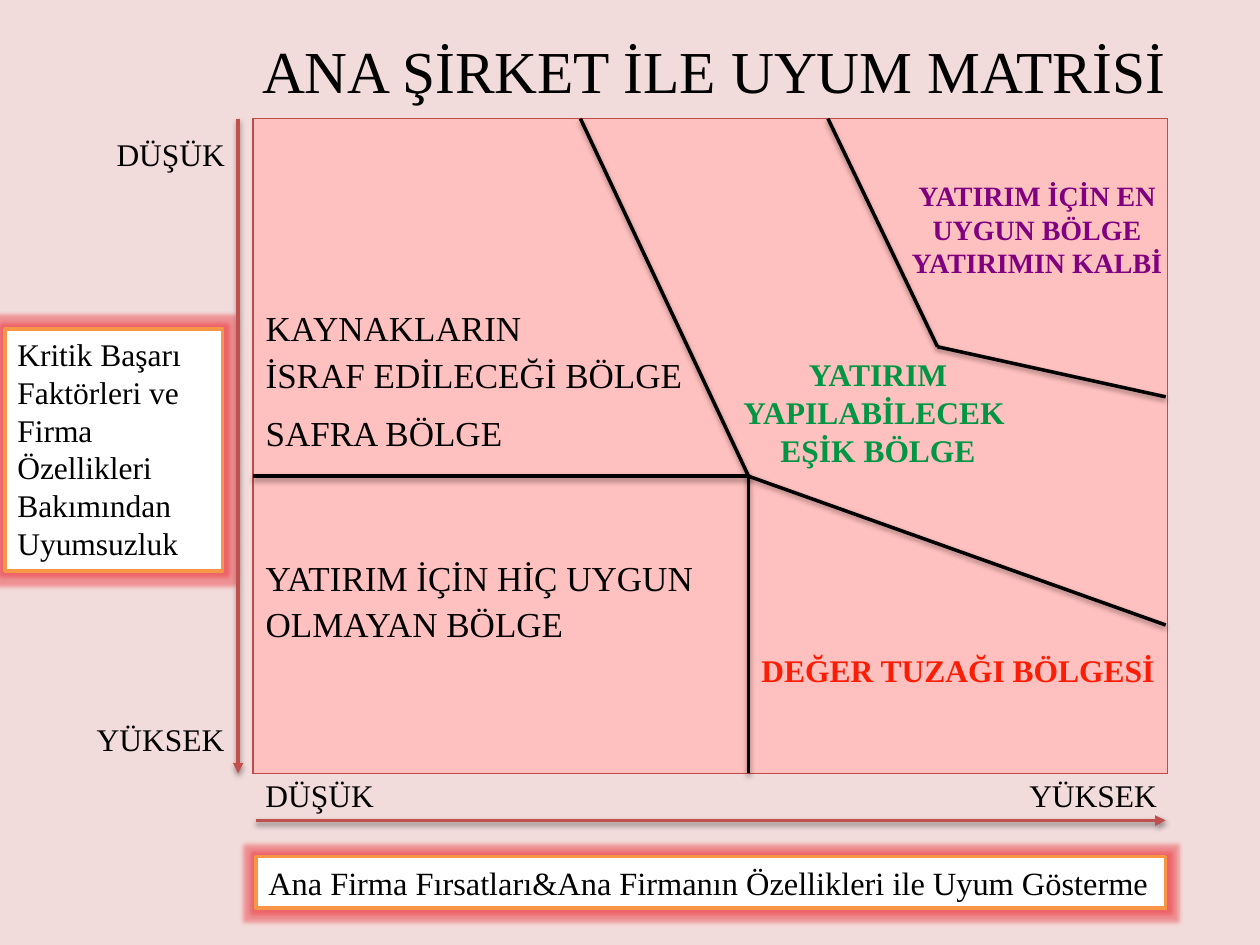
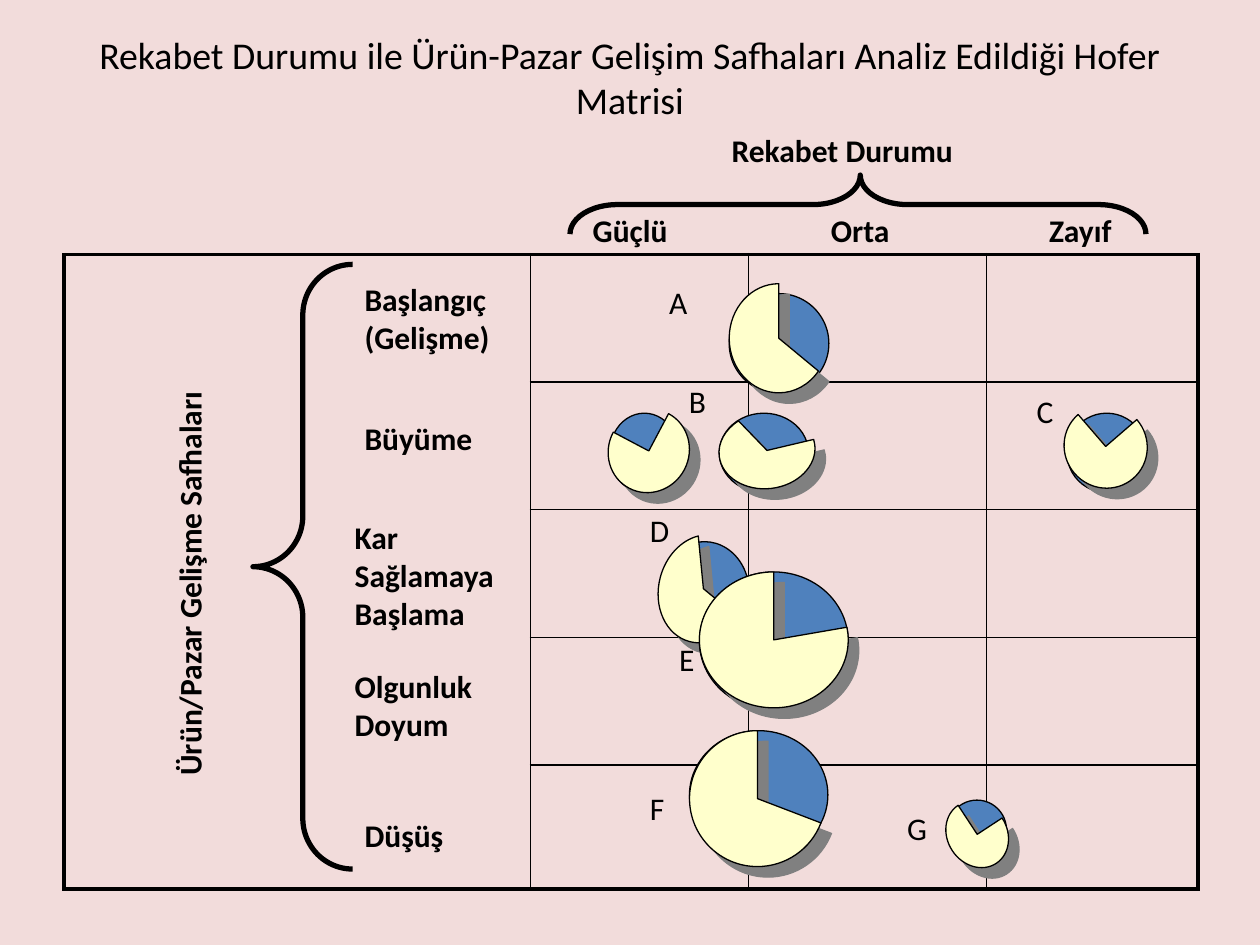
import math
from lxml import etree
from pptx import Presentation
from pptx import util as u
from pptx.dml import color
from pptx.enum import shapes, text
from pptx.oxml import ns

Cm, Pt = u.Cm, u.Pt
RGB = color.RGBColor
BACKGROUND = RGB(0xF2, 0xDC, 0xDB)
MATRIX_PINK = RGB(0xFF, 0xC1, 0xBF)
MATRIX_EDGE = RGB(0xBF, 0x4C, 0x48)
AXIS_RED = RGB(0xC0, 0x50, 0x4D)
ORANGE = RGB(0xF7, 0x96, 0x46)
GLOW_RED = RGB(0xEA, 0x22, 0x2A)
TRAP_RED = RGB(0xFC, 0x1D, 0x06)
GREEN = RGB(0x00, 0x96, 0x44)
PURPLE = RGB(0x80, 0x00, 0x80)
BLUE = RGB(0x4F, 0x81, 0xBD)
CREAM = RGB(0xFF, 0xFF, 0xCC)
GRAY = RGB(0x80, 0x80, 0x80)
BLACK = RGB(0, 0, 0)
WHITE = RGB(0xFF, 0xFF, 0xFF)
SERIF, SANS = "Times New Roman", "Calibri"
LEFT, CENTER = text.PP_ALIGN.LEFT, text.PP_ALIGN.CENTER
TOP, MIDDLE = text.MSO_ANCHOR.TOP, text.MSO_ANCHOR.MIDDLE


def cms(values):
    return [Cm(v) for v in values]


def sub(parent, tag, **attrs):
    return etree.SubElement(parent, ns.qn(tag), {k: str(v) for k, v in attrs.items()})


def add_color(parent, rgb, alpha=100):
    clr = sub(parent, "a:srgbClr", val=rgb)
    if alpha < 100:
        sub(clr, "a:alpha", val=alpha * 1000)


def add_effect(sp, tag, rgb, alpha, **attrs):
    effects = sub(sp._element.spPr, "a:effectLst")
    add_color(sub(effects, tag, **attrs), rgb, alpha)


def add_shadow(sp, rgb, alpha, blur, dist, angle):
    add_effect(sp, "a:outerShdw", rgb, alpha, blurRad=Pt(blur), dist=Pt(dist),
               dir=angle * 60000, algn="ctr", rotWithShape=0)


def add_slide(prs):
    s = prs.slides.add_slide(prs.slide_layouts[6])
    s.background.fill.solid()
    s.background.fill.fore_color.rgb = BACKGROUND
    return s


def write(tf, lines, size, font, rgb=BLACK, bold=False, align=LEFT):
    for i, line in enumerate(lines):
        p = tf.paragraphs[0] if i == 0 else tf.add_paragraph()
        p.text = line
        p.alignment = align
        p.font.size, p.font.name, p.font.bold = Pt(size), font, bold
        p.font.color.rgb = rgb


def add_text(s, box, lines, size=18, font=SANS, wrap=False, **style):
    sp = s.shapes.add_textbox(*cms(box))
    sp.text_frame.word_wrap = wrap
    sp.text_frame.auto_size = text.MSO_AUTO_SIZE.SHAPE_TO_FIT_TEXT
    write(sp.text_frame, lines, size, font, **style)
    return sp


def add_title(s, box, title, size, font):
    sp = add_text(s, box, [title], size, font, wrap=True, align=CENTER)
    sp.text_frame.auto_size = text.MSO_AUTO_SIZE.NONE
    sp.text_frame.vertical_anchor = MIDDLE


def style_shape(sp, fill, line, width):
    if fill is None:
        sp.fill.background()
    else:
        sp.fill.solid()
        sp.fill.fore_color.rgb = fill
    sp.line.color.rgb = line
    sp.line.width = Pt(width)


def add_glow_box(s, box, label, size):
    sp = s.shapes.add_shape(shapes.MSO_SHAPE.RECTANGLE, *cms(box))
    style_shape(sp, WHITE, ORANGE, 2)
    add_effect(sp, "a:glow", GLOW_RED, 40, rad=Pt(5))
    sp.text_frame.word_wrap = True
    sp.text_frame.vertical_anchor = TOP
    write(sp.text_frame, [label], size, SERIF)


def add_line(s, start, end, rgb=BLACK, width=2):
    sp = s.shapes.add_connector(shapes.MSO_CONNECTOR.STRAIGHT, *cms(start + end))
    sp.line.color.rgb = rgb
    sp.line.width = Pt(width)
    return sp


def add_divider(s, start, end):
    add_shadow(add_line(s, start, end), BLACK, 38, 3.1, 1.6, 90)


def add_axis(s, start, end):
    sp = add_line(s, start, end, AXIS_RED)
    sub(sp.line._get_or_add_ln(), "a:tailEnd", type="triangle")
    add_shadow(sp, BLACK, 38, 3.1, 1.6, 90)


def add_table(s, box, widths, heights):
    tbl = s.shapes.add_table(len(heights), len(widths), *cms(box)).table
    tbl.first_row = tbl.horz_banding = False
    for col, width in zip(tbl.columns, widths):
        col.width = Cm(width)
    for row, height in zip(tbl.rows, heights):
        row.height = Cm(height)
    return tbl


def set_borders(cell, rgb, left, right, top, bottom):
    tc_pr = cell._tc.get_or_add_tcPr()
    for side, width in zip("LRTB", (left, right, top, bottom)):
        ln = sub(tc_pr, "a:ln" + side, w=Pt(width))
        add_color(sub(ln, "a:solidFill"), rgb)


def add_brace(s, box, adjustments, rotation=0):
    sp = s.shapes.add_shape(shapes.MSO_SHAPE.LEFT_BRACE, *cms(box))
    sp.shadow.inherit = False
    for i, value in enumerate(adjustments):
        sp.adjustments[i] = value
    sp.rotation = rotation
    style_shape(sp, None, BLACK, 3)


def bend_lines(sp):
    outline = sp._element.spPr.find(".//" + ns.qn("a:path"))
    lines = outline.findall(ns.qn("a:lnTo"))
    for i in range(0, len(lines) - 1, 3):
        curve = etree.Element(ns.qn("a:cubicBezTo"))
        lines[i].addprevious(curve)
        for line in lines[i:i + 3]:
            curve.append(line[0])
            outline.remove(line)


def add_wedge(s, center, radii, start, end, turn):
    (cx, cy), (rx, ry) = center, radii

    def at(x, y):
        return Cm(cx + rx * x), Cm(cy + ry * y)

    stops = [math.radians(a) for a in [start] + [q for q in (180, 90, 0) if q > end] + [end]]
    points = []
    for a, b in zip(stops, stops[1:]):
        k = 4 / 3 * math.tan((b - a) / 4)
        points += [at(math.cos(a) - k * math.sin(a), math.sin(a) + k * math.cos(a)),
                   at(math.cos(b) + k * math.sin(b), math.sin(b) - k * math.cos(b)),
                   at(math.cos(b), math.sin(b))]
    first = at(math.cos(stops[0]), math.sin(stops[0]))
    builder = s.shapes.build_freeform(*first, scale=1.0)
    builder.add_line_segments(points + [at(0, 0)], close=True)
    sp = builder.convert_to_shape()
    bend_lines(sp)
    sp.rotation = turn
    style_shape(sp, CREAM, BLACK, 0.75)
    add_shadow(sp, GRAY, 100, 0, 8.5, 45)


def add_pie(s, disc, *wedge):
    sp = s.shapes.add_shape(shapes.MSO_SHAPE.OVAL, *cms(disc))
    sp.shadow.inherit = False
    style_shape(sp, BLUE, BLACK, 0.75)
    add_wedge(s, *wedge)


def build_fit_matrix(prs):
    s = add_slide(prs)
    left, top, width, height = box = (5.1, 2.39, 18.44, 13.2)
    right, bottom = 23.5, top + height

    cell = add_table(s, box, [width], [height]).cell(0, 0)
    set_borders(cell, MATRIX_EDGE, 0.75, 0.75, 0.75, 0.75)
    cell.fill.solid()
    cell.fill.fore_color.rgb = MATRIX_PINK
    cell.vertical_anchor = TOP
    cell.margin_top = Cm(3.86)
    regions = [("KAYNAKLARIN", 0), ("İSRAF EDİLECEĞİ BÖLGE", 4.5), ("SAFRA BÖLGE", 10.9),
               ("YATIRIM İÇİN HİÇ UYGUN", 60.8), ("OLMAYAN BÖLGE", 4.5)]
    write(cell.text_frame, [name for name, _ in regions], 20, SERIF)
    for p, (_, gap) in zip(cell.text_frame.paragraphs, regions):
        p.space_before = Pt(gap)

    add_glow_box(s, (0.1, 6.63, 4.39, 4.88),
                 "Kritik Başarı Faktörleri ve Firma Özellikleri Bakımından Uyumsuzluk", 18)
    add_glow_box(s, (5.16, 17.27, 18.34, 1.04),
                 "Ana Firma Fırsatları&Ana Firmanın Özellikleri ile Uyum Gösterme", 18.5)

    for x, y, w, label in [(5.1, 15.52, 4.19, "DÜŞÜK"), (20.5, 15.52, 4.29, "YÜKSEK"),
                           (2.1, 2.59, 3.4, "DÜŞÜK"), (1.7, 14.4, 3.2, "YÜKSEK")]:
        add_text(s, (x, y, w, 1.02), [label], font=SERIF, wrap=True)
    add_axis(s, (5.16, 16.54), (right, 16.54))
    add_axis(s, (4.8, top), (4.8, bottom))

    hub, corner = (15.09, 9.6), (18.9, 6.99)
    for start, end in [((left, hub[1]), hub), (hub, (hub[0], bottom)),
                       ((11.7, top), hub), (hub, (right, 12.6)),
                       ((16.69, top), corner), (corner, (right, 8))]:
        add_divider(s, start, end)

    for region, lines, size, rgb, align in [
            ((15.1, 13, 8.61, 1.02), ["DEĞER TUZAĞI BÖLGESİ"], 18, TRAP_RED, LEFT),
            ((14.7, 7.04, 6, 2.57), ["YATIRIM YAPILABİLECEK ", "EŞİK BÖLGE"], 18, GREEN, CENTER),
            ((18.11, 3.48, 5.59, 2.31), ["YATIRIM İÇİN EN UYGUN BÖLGE", "YATIRIMIN KALBİ"],
             16, PURPLE, CENTER)]:
        add_text(s, region, lines, size, SERIF, wrap=True, rgb=rgb, bold=True, align=align)

    add_title(s, (4.29, 0.53, 20.2, 1.75), "ANA ŞİRKET İLE UYUM MATRİSİ", 34, SERIF)


def build_hofer_matrix(prs):
    s = add_slide(prs)
    add_title(s, (1.27, 0.77, 22.86, 1.55),
              "Rekabet Durumu ile Ürün-Pazar Gelişim Safhaları Analiz Edildiği Hofer Matrisi",
              21.6, SANS)

    widths, heights = [9.4, 4.4, 4.8, 4.26], [2.57, 2.57, 2.58, 2.57, 2.5]
    tbl = add_table(s, (1.29, 5.13, sum(widths), sum(heights)), widths, heights)
    rows, cols = len(heights), len(widths)
    tbl.cell(0, 0).merge(tbl.cell(rows - 1, 0))
    for r in range(rows):
        for c in range(cols):
            cell = tbl.cell(r, c)
            if not cell.is_spanned:
                edges = (c == 0, c == cols - 1, r == 0, r + cell.span_height == rows)
                set_borders(cell, BLACK, *(2.25 if outer else 1 for outer in edges))
            cell.fill.background()

    hand_top, hand_hub, hand_end = (15.29, 14.73), (15.29, 15.93), (16.31, 16.74)
    for start, end in [(hand_top, hand_hub), (hand_hub, hand_end)]:
        sub(add_line(s, start, end, width=0.75)._element.spPr, "a:effectLst")

    for box, lines in [
            ((11.7, 4.12, 2.31, 1.02), ["Güçlü"]),
            ((16.5, 4.12, 1.85, 1.02), ["Orta"]),
            ((20.9, 4.12, 1.98, 1.02), ["Zayıf"]),
            ((7.1, 5.53, 3.51, 1.78), ["Başlangıç", "(Gelişme)"]),
            ((7.1, 8.33, 3.02, 1.02), ["Büyüme"]),
            ((6.9, 10.32, 3.84, 2.54), ["Kar", "Sağlamaya", "Başlama"]),
            ((6.9, 13.33, 3.25, 1.78), ["Olgunluk", "Doyum"]),
            ((7.1, 16.33, 2.46, 1.02), ["Düşüş"]),
            ((14.5, 2.51, 5.59, 1.02), ["Rekabet Durumu"])]:
        add_text(s, box, lines, bold=True)
    stages = add_text(s, (-0.87, 10.69, 9.37, 1.02), ["Ürün/Pazar Gelişme Safhaları"], bold=True)
    stages.rotation = 270
    add_brace(s, (5.1, 5.33, 2.01, 12.19), (0.508, 0.5))
    add_brace(s, (16.7, -1.68, 1.19, 11.61), (0.803, 0.496), 90)

    for pie in [
            ((13.9, 14.73, 2.79, 2.59), (15.27, 16.1), (1.37, 1.37), 270, 21, 0),
            ((14.7, 5.92, 2.01, 2.01), (15.7, 6.82), (1, 1.1), 270, 37, 0),
            ((14.5, 8.33, 1.8, 1.6), (15.47, 9.08), (0.97, 0.77), 239, -8, -6.9),
            ((12.29, 8.33, 1.4, 1.6), (13.08, 9.09), (0.85, 0.81), 270, 0, -62.1),
            ((13.3, 10.92, 1.8, 2.01), (14.17, 11.86), (0.9, 1.1), 245.7, 20.6, 14.7),
            ((14.1, 11.53, 3, 2.79), (15.6, 12.9), (1.5, 1.37), 270, -10.7, 0),
            ((21.51, 8.33, 1.6, 1.6), (22.29, 9), (0.83, 0.85), 270, 0, -40.8),
            ((19.1, 16.13, 1.19, 1.19), (19.7, 16.82), (0.6, 0.7), 270, 0, -33.3)]:
        add_pie(s, *pie)

    for letter, x, y in [("A", 13.24, 5.59), ("B", 13.64, 7.57), ("C", 20.65, 7.77),
                         ("D", 12.85, 10.18), ("E", 13.44, 12.78), ("F", 12.85, 15.78),
                         ("G", 18.04, 16.18)]:
        add_text(s, (x, y, 0.95, 1.02), [letter])


def main():
    prs = Presentation()
    prs.slide_width, prs.slide_height = Cm(25.4), Cm(19.05)
    build_fit_matrix(prs)
    build_hofer_matrix(prs)
    prs.save("out.pptx")


if __name__ == "__main__":
    main()
